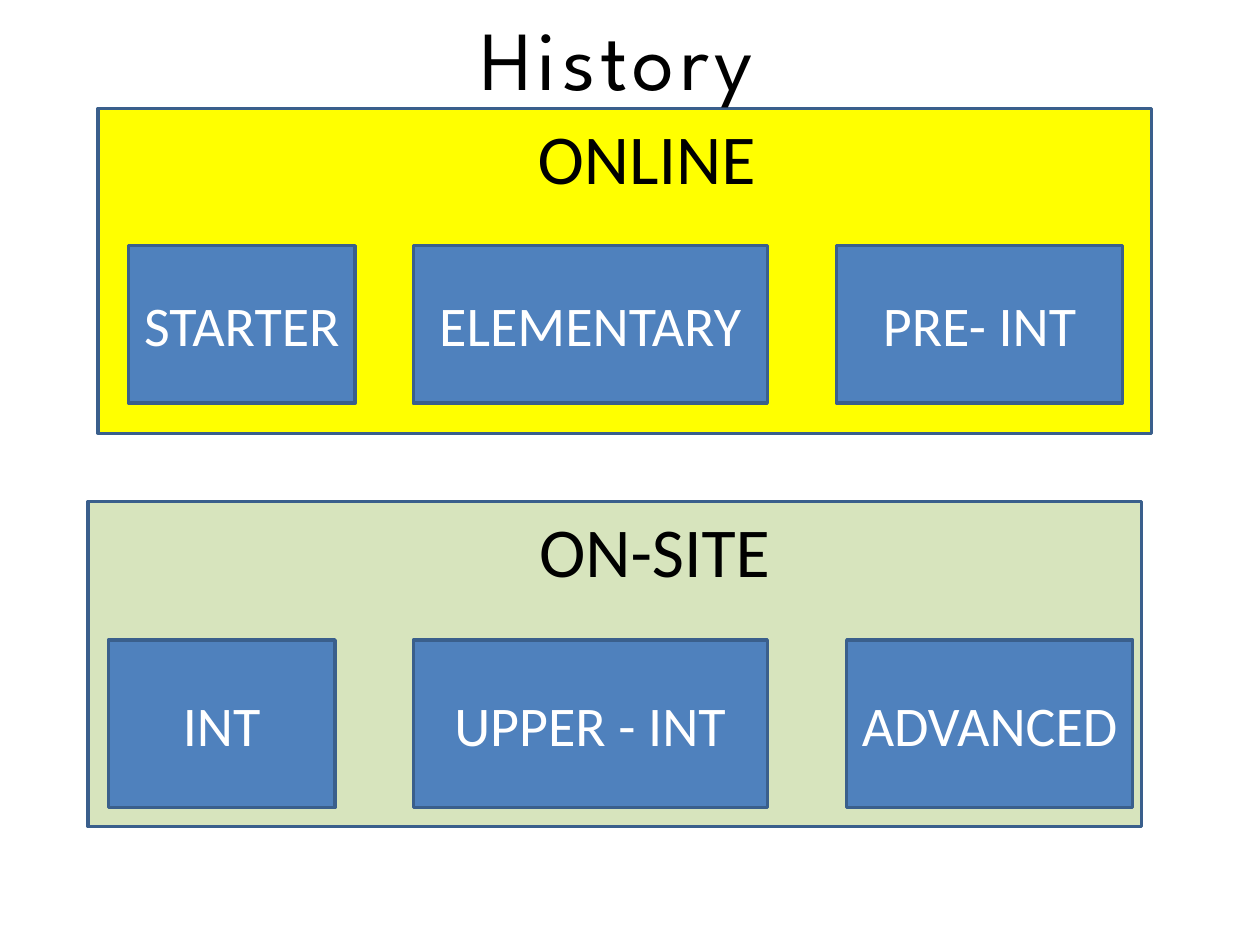
from dataclasses import dataclass

from pptx import Presentation
from pptx.dml.color import RGBColor
from pptx.enum.shapes import MSO_SHAPE
from pptx.enum.text import MSO_ANCHOR, MSO_AUTO_SIZE, PP_ALIGN
from pptx.shapes.autoshape import Shape
from pptx.slide import Slide
from pptx.util import Inches, Pt


@dataclass(frozen=True)
class Theme:
    black: str = "000000"
    white: str = "FFFFFF"
    level_fill: str = "4F81BD"
    outline: str = "3A5F8C"
    title_font: str = "League Spartan"
    body_font: str = "Calibri"
    title_size: int = 48
    heading_size: int = 40
    level_size: int = 32
    line_width: int = 2


@dataclass(frozen=True)
class Box:
    left: float
    top: float
    width: float
    height: float


@dataclass(frozen=True)
class Level:
    name: str
    left: float
    width: float


@dataclass(frozen=True)
class Course:
    heading: str
    fill: str
    panel: Box
    level_top: float
    level_height: float
    levels: tuple[Level, ...]


THEME = Theme()
HEADING_LEFT, HEADING_WIDTH, HEADING_HEIGHT = 3.36, 3.67, 0.77

COURSES = (
    Course("ON-SITE", "D7E4BD", Box(0.7, 3.98, 8.36, 2.58), 5.08, 1.33,
           (Level("INT", 0.86, 1.8),
            Level("UPPER - INT", 3.28, 2.81),
            Level("ADVANCED", 6.72, 2.27))),
    Course("ONLINE ", "FFFF00", Box(0.78, 0.86, 8.36, 2.58), 1.95, 1.25,
           (Level("STARTER ", 1.02, 1.8),
            Level("ELEMENTARY", 3.28, 2.81),
            Level("PRE- INT", 6.64, 2.27))),
)


def place(box: Box) -> tuple[Inches, ...]:
    return tuple(Inches(v) for v in (box.left, box.top, box.width, box.height))


def write(sp: Shape, text: str, size: int, color: str, font: str) -> None:
    tf = sp.text_frame
    tf.word_wrap = True
    p = tf.paragraphs[0]
    p.text = text
    p.alignment = PP_ALIGN.CENTER
    p.font.size = Pt(size)
    p.font.name = font
    p.font.color.rgb = RGBColor.from_string(color)


def add_rect(s: Slide, box: Box, fill: str) -> Shape:
    sp = s.shapes.add_shape(MSO_SHAPE.RECTANGLE, *place(box))
    sp.shadow.inherit = False
    sp.fill.solid()
    sp.fill.fore_color.rgb = RGBColor.from_string(fill)
    sp.line.color.rgb = RGBColor.from_string(THEME.outline)
    sp.line.width = Pt(THEME.line_width)
    return sp


def add_label(s: Slide, box: Box, text: str, size: int, font: str) -> Shape:
    sp = s.shapes.add_textbox(*place(box))
    write(sp, text, size, THEME.black, font)
    sp.text_frame.auto_size = MSO_AUTO_SIZE.SHAPE_TO_FIT_TEXT
    return sp


def add_course(s: Slide, course: Course) -> None:
    heading_box = Box(HEADING_LEFT, course.panel.top, HEADING_WIDTH, HEADING_HEIGHT)
    add_label(s, heading_box, course.heading, THEME.heading_size, THEME.body_font)
    for level in course.levels:
        box = Box(level.left, course.level_top, level.width, course.level_height)
        sp = add_rect(s, box, THEME.level_fill)
        sp.text_frame.vertical_anchor = MSO_ANCHOR.MIDDLE
        write(sp, level.name, THEME.level_size, THEME.white, THEME.body_font)


def main() -> None:
    prs = Presentation()
    prs.slide_width, prs.slide_height = Inches(10), Inches(7.5)
    s = prs.slides.add_slide(prs.slide_layouts[6])

    # Panels lie behind everything else
    for course in COURSES:
        add_rect(s, course.panel, course.fill)

    # Title with letter spacing of 3 pt
    title = add_label(s, Box(0, 0, 10, 0.91), "History ",
                      THEME.title_size, THEME.title_font)
    r = title.text_frame.paragraphs[0].runs[0]
    r.font._element.set("spc", "300")

    # Headings and levels
    for course in COURSES:
        add_course(s, course)

    prs.save("out.pptx")


if __name__ == "__main__":
    main()
